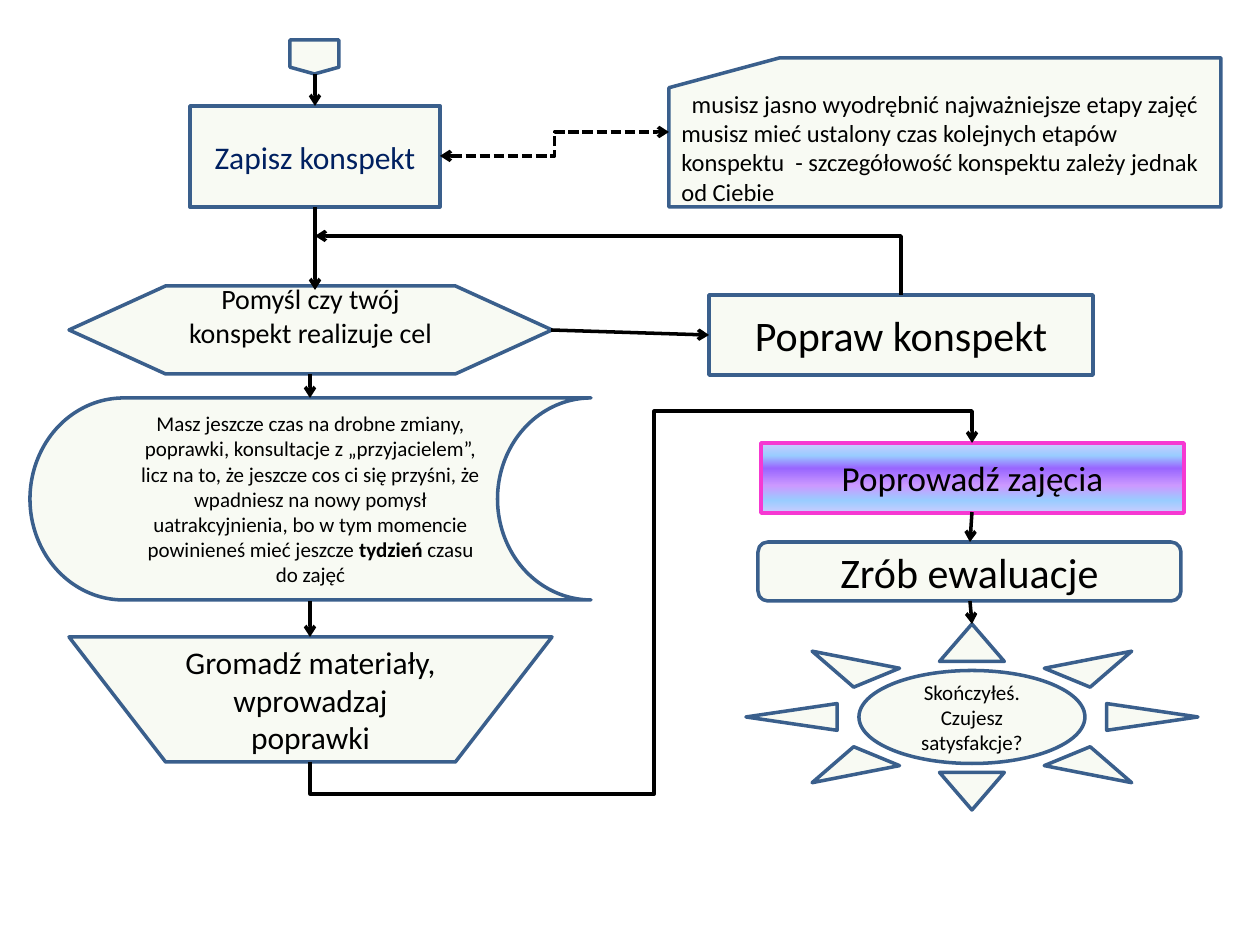
import lxml.etree
import pptx
import pptx.dml.color
import pptx.enum.dml
import pptx.enum.shapes
import pptx.enum.text
import pptx.oxml
import pptx.oxml.ns
import pptx.util

EMU_PER_PX = 914400 / 126
OUTLINE = "3A5F8C"
BLACK = "000000"
RAINBOW = [(0, "CCCCFF"), (18, "99CCFF"), (36, "9966FF"),
           (61, "CC99FF"), (82, "99CCFF"), (100, "CCCCFF")]
KIND = pptx.enum.shapes.MSO_SHAPE
CENTER = pptx.enum.text.PP_ALIGN.CENTER
LEFT = pptx.enum.text.PP_ALIGN.LEFT


def px(length):
    """Turn pixels into EMU."""
    return pptx.util.Emu(round(length * EMU_PER_PX))


def colour(value):
    """Turn a hex string into a colour."""
    return pptx.dml.color.RGBColor.from_string(value)


def child(parent, tag, **attributes):
    """Append a DrawingML element with the given attributes."""
    return lxml.etree.SubElement(parent, pptx.oxml.ns.qn(tag), attributes)


def tint(shape):
    """Fill a shape with the translucent pale green."""
    shape.fill.solid()
    shape.fill.fore_color.rgb = colour("EBF1DE")
    srgb = shape._element.spPr.find(".//" + pptx.oxml.ns.qn("a:srgbClr"))
    child(srgb, "a:alpha", val="34000")


def rainbow(shape):
    """Fill a shape with the vertical violet and blue gradient."""
    shape.fill.gradient()
    shape.fill.gradient_angle = 270
    stops = shape._element.spPr.find(".//" + pptx.oxml.ns.qn("a:gsLst"))
    for stop in list(stops):
        stops.remove(stop)
    for position, value in RAINBOW:
        stop = child(stops, "a:gs", pos=str(position * 1000))
        child(stop, "a:srgbClr", val=value)


def step(slide, kind, box, outline=OUTLINE, paint=tint):
    """Draw one outlined step of the flowchart."""
    shape = slide.shapes.add_shape(kind, *map(px, box))
    shape.shadow.inherit = False
    paint(shape)
    shape.line.color.rgb = colour(outline)
    shape.line.width = pptx.util.Pt(2)
    return shape


def write(shape, size, *paragraphs, ink=BLACK):
    """Write paragraphs, each an alignment followed by its runs; odd runs are bold."""
    frame = shape.text_frame
    frame.word_wrap = True
    frame.vertical_anchor = pptx.enum.text.MSO_ANCHOR.MIDDLE
    for number, (alignment, *texts) in enumerate(paragraphs):
        paragraph = frame.add_paragraph() if number else frame.paragraphs[0]
        paragraph.alignment = alignment
        paragraph.font.name = "Calibri"
        paragraph.font.size = pptx.util.Pt(size)
        paragraph.font.color.rgb = colour(ink)
        for index, text in enumerate(texts):
            run = paragraph.add_run()
            run.text = text
            if index % 2:
                run.font.bold = True


def arrow(slide, start, end, kind=pptx.enum.shapes.MSO_CONNECTOR.STRAIGHT, both_ways=False):
    """Draw a black connector with an open arrowhead at its end."""
    connector = slide.shapes.add_connector(kind, *map(px, (*start, *end)))
    connector.line.color.rgb = colour(BLACK)
    connector.line.width = pptx.util.Pt(2)
    if both_ways:
        connector.line.dash_style = pptx.enum.dml.MSO_LINE.SQUARE_DOT
    line = connector.line._get_or_add_ln()
    if both_ways:
        child(line, "a:headEnd", type="arrow")
    child(line, "a:tailEnd", type="arrow")
    child(connector._element.spPr, "a:effectLst")
    return connector


def elbow(slide, start, end, segments, turns=0, bends=(), both_ways=False):
    """Draw a bent arrow whose frame is rotated by quarter turns."""
    middle_x, middle_y = (start[0] + end[0]) / 2, (start[1] + end[1]) / 2
    dx, dy = start[0] - middle_x, start[1] - middle_y
    for _ in range(turns):
        dx, dy = dy, -dx
    connector = arrow(slide, (middle_x + dx, middle_y + dy), (middle_x - dx, middle_y - dy),
                      pptx.enum.shapes.MSO_CONNECTOR.ELBOW, both_ways)
    properties = connector._element.spPr
    if turns:
        properties.find(pptx.oxml.ns.qn("a:xfrm")).set("rot", str(turns * 5400000))
    geometry = properties.find(pptx.oxml.ns.qn("a:prstGeom"))
    geometry.set("prst", f"bentConnector{segments}")
    guides = geometry.find(pptx.oxml.ns.qn("a:avLst"))
    for number, percent in enumerate(bends, 1):
        child(guides, "a:gd", name=f"adj{number}", fmla=f"val {percent * 1000}")


def draw_steps(slide):
    """Draw the steps with their wording."""
    step(slide, KIND.FLOWCHART_OFFPAGE_CONNECTOR, (290, 40, 49, 34))
    write(step(slide, KIND.RECTANGLE, (190, 106, 250, 101)), 18,
          (CENTER, "Zapisz konspekt"), ink="002060")
    write(step(slide, KIND.FLOWCHART_CARD, (669, 58, 552, 149)), 14,
          (CENTER, "musisz jasno wyodrębnić najważniejsze etapy zajęć"),
          (LEFT, "musisz mieć ustalony czas kolejnych etapów konspektu  - "
                 "szczegółowość konspektu zależy jednak od Ciebie"))
    reflection = step(slide, KIND.FLOWCHART_PREPARATION, (69, 286, 483, 88))
    write(reflection, 16, (CENTER, "Pomyśl czy twój konspekt realizuje cel"))
    reflection.text_frame.margin_bottom = px(36)
    write(step(slide, KIND.RECTANGLE, (709, 295, 384, 80)), 24, (CENTER, "Popraw konspekt"))
    write(step(slide, KIND.FLOWCHART_STORED_DATA, (30, 398, 561, 202)), 12,
          (CENTER, "Masz jeszcze czas na drobne zmiany, poprawki, konsultacje z "
                   "„przyjacielem”, licz na to, że jeszcze cos ci się przyśni, że "
                   "wpadniesz na nowy pomysł uatrakcyjnienia, bo w tym momencie "
                   "powinieneś mieć jeszcze ", "tydzień", " czasu do zajęć"))
    write(step(slide, KIND.FLOWCHART_MANUAL_OPERATION, (69, 637, 483, 125)), 18,
          (CENTER, "Gromadź materiały, wprowadzaj poprawki"))
    write(step(slide, KIND.FLOWCHART_PROCESS, (761, 443, 423, 70), "F638D2", rainbow), 20,
          (CENTER, "Poprowadź zajęcia"))
    write(step(slide, KIND.FLOWCHART_ALTERNATE_PROCESS, (758, 542, 423, 59)), 24,
          (CENTER, "Zrób ewaluacje"))
    write(step(slide, KIND.SUN, (746, 624, 452, 186)), 12,
          (CENTER, "Skończyłeś. Czujesz satysfakcje?"))


def draw_arrows(slide):
    """Join the steps."""
    for start, end in [((315, 74), (315, 106)), ((315, 207), (315, 290)),
                       ((310, 374), (310, 398)), ((551, 330), (709, 335)),
                       ((310, 601), (310, 637)), ((972, 512), (970, 542)),
                       ((970, 601), (972, 624))]:
        arrow(slide, start, end)
    elbow(slide, (440, 156), (669, 132), 3, both_ways=True)
    elbow(slide, (901, 295), (315, 236), 2, turns=3)
    elbow(slide, (310, 762), (972, 443), 5, turns=1, bends=(-10, 52, 110))


def main():
    """Build and save the lesson-plan flowchart."""
    deck = pptx.Presentation()
    deck.slide_width, deck.slide_height = px(1260), px(945)
    slide = deck.slides.add_slide(deck.slide_layouts[6])
    draw_steps(slide)
    draw_arrows(slide)
    deck.save("out.pptx")


if __name__ == "__main__":
    main()
